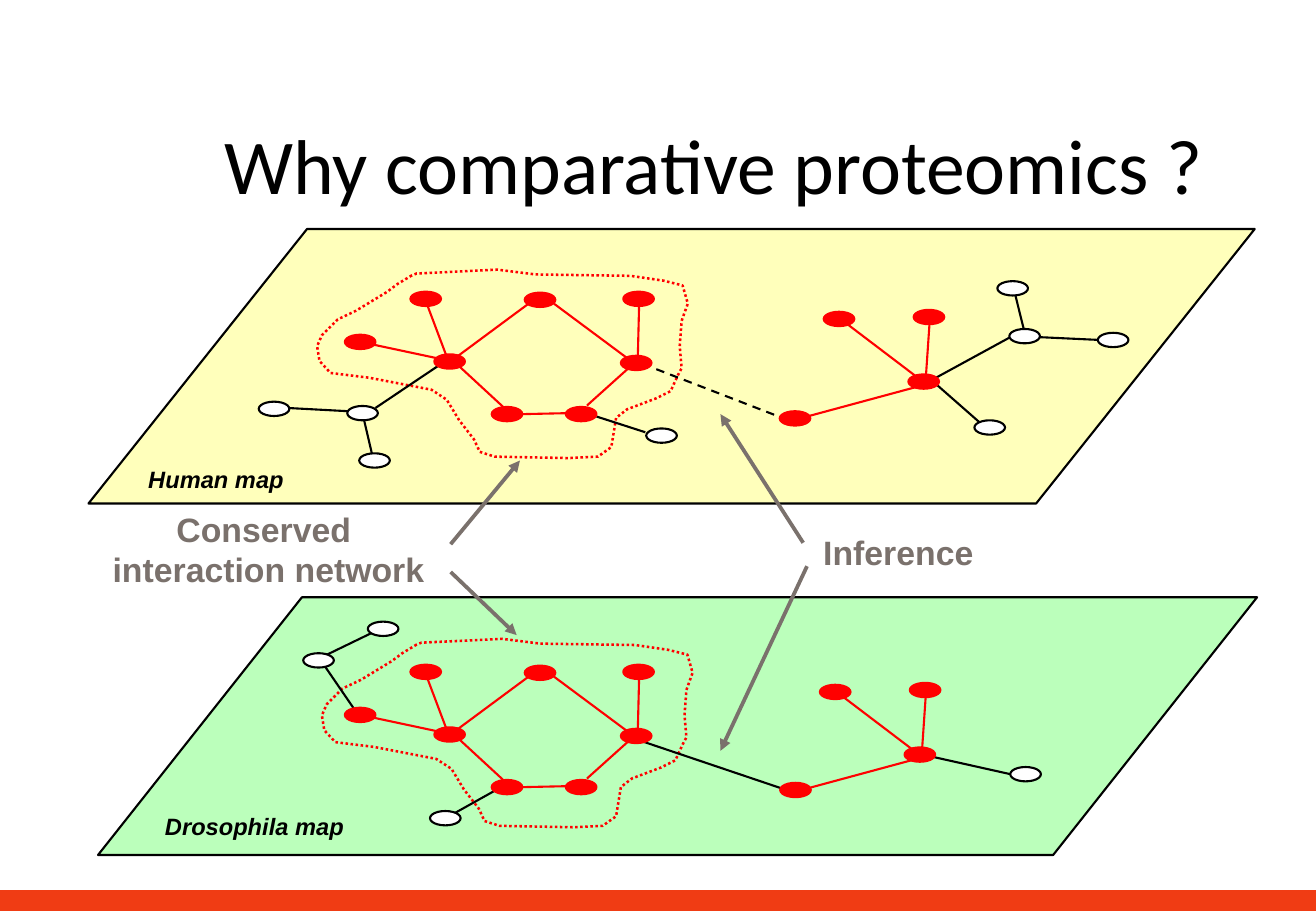
from dataclasses import dataclass
from lxml.etree import SubElement
from pptx import Presentation
from pptx.dml.color import RGBColor
from pptx.enum.dml import MSO_LINE as Dash
from pptx.enum.shapes import MSO_CONNECTOR as Link, MSO_SHAPE as Kind
from pptx.enum.text import MSO_ANCHOR as Anchor, PP_ALIGN as Align
from pptx.oxml.ns import qn
from pptx.util import Cm, Pt

BLACK = RGBColor(0x00, 0x00, 0x00)
WHITE = RGBColor(0xFF, 0xFF, 0xFF)
RED = RGBColor(0xFF, 0x00, 0x00)
GREY = RGBColor(0x7A, 0x71, 0x6C)
YELLOW = RGBColor(0xFF, 0xFF, 0xBB)
GREEN = RGBColor(0xBB, 0xFF, 0xBB)
ORANGE = RGBColor(0xF0, 0x3C, 0x14)

Point = tuple[float, float]
Box = tuple[float, float, float, float]

# All lengths are in centimetres.
NODE_W, NODE_H = 0.64, 0.3
THIN, DOTTED, THICK = 1.25, 1.5, 2.25


@dataclass
class Node:
    x: float
    y: float
    fill: RGBColor = WHITE
    line: RGBColor = BLACK


@dataclass
class Edge:
    ends: Box
    color: RGBColor = BLACK
    width: float = THIN
    dash: Dash | None = None
    arrow: bool = False


@dataclass
class Label:
    box: Box
    lines: list[str]
    style: dict
    align: Align = Align.LEFT
    wrap: bool = True


@dataclass
class Map:
    plane: Box
    slant: float
    fill: RGBColor
    label: Label
    ring: Point      # shift of the conserved ring
    hub: Point       # shift of the right-hand hub
    outline: Point   # shift of the dotted outline
    bait: Point
    nodes: list[Point]
    edges: list[Box]
    dashed: list[Box]


NAME = dict(name="Arial", size=Pt(14), bold=True, italic=True)
NOTE = dict(name="Arial", size=Pt(20), bold=True)
HEAD = dict(name="Calibri", size=Pt(46))

RING_NODES = [(8.9, 6.25), (7.53, 7.15), (10.6, 8.66), (12.15, 8.66),
              (11.29, 6.27), (13.35, 6.25), (9.4, 7.56), (13.3, 7.59)]
RING_EDGES = [(7.82, 7.21, 9.37, 7.54), (8.94, 6.4, 9.35, 7.49),
              (9.47, 7.54, 10.52, 8.51), (9.47, 7.52, 11.05, 6.35),
              (13.36, 6.38, 13.33, 7.59), (10.92, 8.66, 11.84, 8.64),
              (13.26, 7.59, 12.27, 8.48), (13.18, 7.54, 11.58, 6.35)]
HUB_NODES = [(17.54, 6.67), (19.42, 6.63), (19.31, 7.98)]
HUB_EDGES = [(19.43, 6.78, 19.35, 7.95), (19.2, 8.08, 16.87, 8.71),
             (19.15, 7.87, 17.65, 6.73)]
OUTLINE = [(8.61, 5.76), (8.31, 5.94), (8.1, 6.1), (7.44, 6.5), (7.06, 6.68),
           (6.73, 7.01), (6.63, 7.24), (6.68, 7.55), (6.91, 7.8), (7.72, 7.9),
           (9.02, 8.15), (9.34, 8.36), (9.6, 8.79), (9.91, 9.19),
           (10.03, 9.45), (10.34, 9.55), (11.89, 9.58), (12.5, 9.55),
           (12.78, 9.35), (12.88, 8.74), (13.11, 8.56), (13.72, 8.33),
           (14.02, 8.18), (14.17, 7.85), (14.25, 7.7), (14.21, 7.24),
           (14.25, 6.71), (14.35, 6.43), (14.38, 6.35), (14.27, 5.97),
           (13.87, 5.87), (13.18, 5.77), (11.2, 5.74), (10.4, 5.64),
           (8.71, 5.72)]

MAPS = [
    Map((1.85, 4.79, 24.38, 5.74), 0.796, YELLOW,
        Label((2.85, 9.59, 4.85, 0.99), ["Human map"], NAME),
        ring=(0, 0), hub=(0, 0), outline=(0, 0), bait=(16.62, 8.75),
        nodes=[(13.83, 9.11), (7.58, 8.64), (5.73, 8.55), (7.83, 9.63),
               (21.42, 7.03), (23.27, 7.11), (21.17, 6.03), (20.69, 8.94)],
        edges=[(7.85, 8.53, 9.25, 7.59), (12.47, 8.71, 13.49, 9.04),
               (5.99, 8.53, 7.49, 8.61), (7.82, 9.68, 7.57, 8.61),
               (19.53, 8, 20.6, 8.94), (19.38, 8, 21.23, 6.99),
               (23.01, 7.11, 21.51, 7.04), (21.18, 5.99, 21.44, 7.04)],
        dashed=[(13.72, 7.72, 16.41, 8.76)]),
    Map((2.05, 12.49, 24.23, 5.39), 0.791, GREEN,
        Label((3.2, 16.86, 4.8, 0.99), ["Drosophila map"], NAME),
        ring=(0, 7.8), hub=(-0.08, 7.8), outline=(0.1, 7.72),
        bait=(16.63, 16.52),
        nodes=[(8.01, 13.15), (9.31, 17.11), (6.66, 13.81), (21.44, 16.19)],
        edges=[(6.73, 13.74, 8.03, 13.11), (9.35, 17.09, 10.44, 16.48),
               (7.44, 14.88, 6.68, 13.77), (13.33, 15.47, 16.41, 16.51),
               (19.38, 15.8, 21.44, 16.26)],
        dashed=[]),
]
ARROWS = [(16.87, 11.84, 15.06, 15.7), (16.79, 11.35, 15.06, 8.66),
          (9.42, 11.38, 10.87, 9.63), (9.42, 11.96, 10.8, 13.28)]
LABELS = [
    Label((16.94, 11, 3.68, 1.12), ["Inference"], NOTE, Align.CENTER, False),
    Label((2.07, 10.51, 7.09, 1.96), ["Conserved ", "interaction network"],
          NOTE, Align.CENTER, False),
    Label((3.67, 2.31, 22.48, 2.97), ["Why comparative proteomics ?"],
          HEAD, Align.CENTER),
]


def move(coords: tuple, shift: Point) -> tuple:
    return tuple(c + shift[i % 2] for i, c in enumerate(coords))


def draw_shape(shapes, kind: Kind, box: Box, fill: RGBColor,
               line: RGBColor, width: float = THIN):
    shape = shapes.add_shape(kind, *map(Cm, box))
    shape.shadow.inherit = False
    shape.fill.solid()
    shape.fill.fore_color.rgb = fill
    shape.line.color.rgb = line
    shape.line.width = Pt(width)
    return shape


def draw_node(shapes, node: Node) -> None:
    box = (node.x - NODE_W / 2, node.y - NODE_H / 2, NODE_W, NODE_H)
    draw_shape(shapes, Kind.OVAL, box, node.fill, node.line)


def draw_edge(shapes, edge: Edge) -> None:
    link = shapes.add_connector(Link.STRAIGHT, *map(Cm, edge.ends))
    link.line.color.rgb = edge.color
    link.line.width = Pt(edge.width)
    if edge.dash:
        link.line.dash_style = edge.dash
    if edge.arrow:
        SubElement(link.line._get_or_add_ln(), qn("a:tailEnd"), type="triangle")
    SubElement(link._element.spPr, qn("a:effectLst"))


def draw_label(shapes, label: Label, color: RGBColor) -> None:
    frame = shapes.add_textbox(*map(Cm, label.box)).text_frame
    frame.word_wrap = label.wrap
    frame.vertical_anchor = Anchor.TOP
    frame.text = "\n".join(label.lines)
    for para in frame.paragraphs:
        para.alignment = label.align
        para.font.color.rgb = color
        for key, value in label.style.items():
            setattr(para.font, key, value)


def draw_outline(shapes, shift: Point) -> None:
    dots = [tuple(map(Cm, move(p, shift))) for p in OUTLINE]
    pen = shapes.build_freeform(*dots[0])
    pen.add_line_segments(dots[1:], close=True)
    shape = pen.convert_to_shape()
    shape.shadow.inherit = False
    shape.fill.background()
    shape.line.color.rgb = RED
    shape.line.width = Pt(DOTTED)
    shape.line.dash_style = Dash.ROUND_DOT


def draw_map(shapes, part: Map) -> None:
    plane = draw_shape(shapes, Kind.PARALLELOGRAM, part.plane, part.fill, BLACK)
    plane.adjustments[0] = part.slant
    draw_label(shapes, part.label, BLACK)
    draw_outline(shapes, part.outline)
    edges = [Edge(e) for e in part.edges]
    edges += [Edge(e, dash=Dash.DASH) for e in part.dashed]
    nodes = [Node(*n) for n in part.nodes] + [Node(*part.bait, RED, RED)]
    for spots, ties, shift in ((RING_NODES, RING_EDGES, part.ring),
                               (HUB_NODES, HUB_EDGES, part.hub)):
        edges += [Edge(move(e, shift), RED) for e in ties]
        nodes += [Node(*move(n, shift), RED, RED) for n in spots]
    for edge in edges:
        draw_edge(shapes, edge)
    for node in nodes:
        draw_node(shapes, node)


def main() -> None:
    deck = Presentation()
    deck.slide_width, deck.slide_height = Cm(27.51), Cm(19.05)
    shapes = deck.slides.add_slide(deck.slide_layouts[6]).shapes
    draw_shape(shapes, Kind.RECTANGLE, (0, 18.64, 27.51, 0.41), ORANGE, ORANGE, 2)
    for part in MAPS:
        draw_map(shapes, part)
    for ends in ARROWS:
        draw_edge(shapes, Edge(ends, GREY, THICK, arrow=True))
    for label in LABELS:
        draw_label(shapes, label, BLACK if label.style is HEAD else GREY)
    deck.save("out.pptx")


if __name__ == "__main__":
    main()
